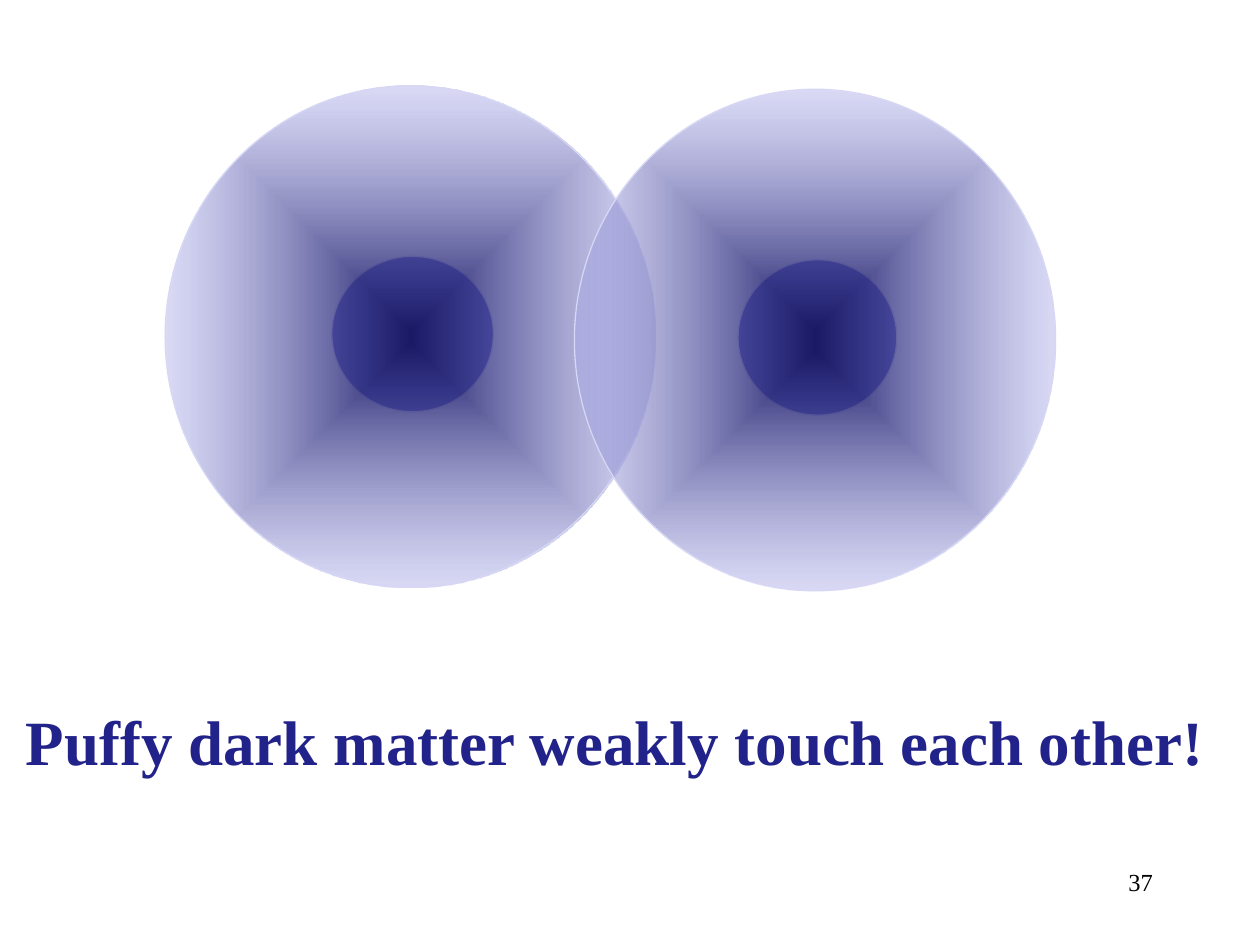
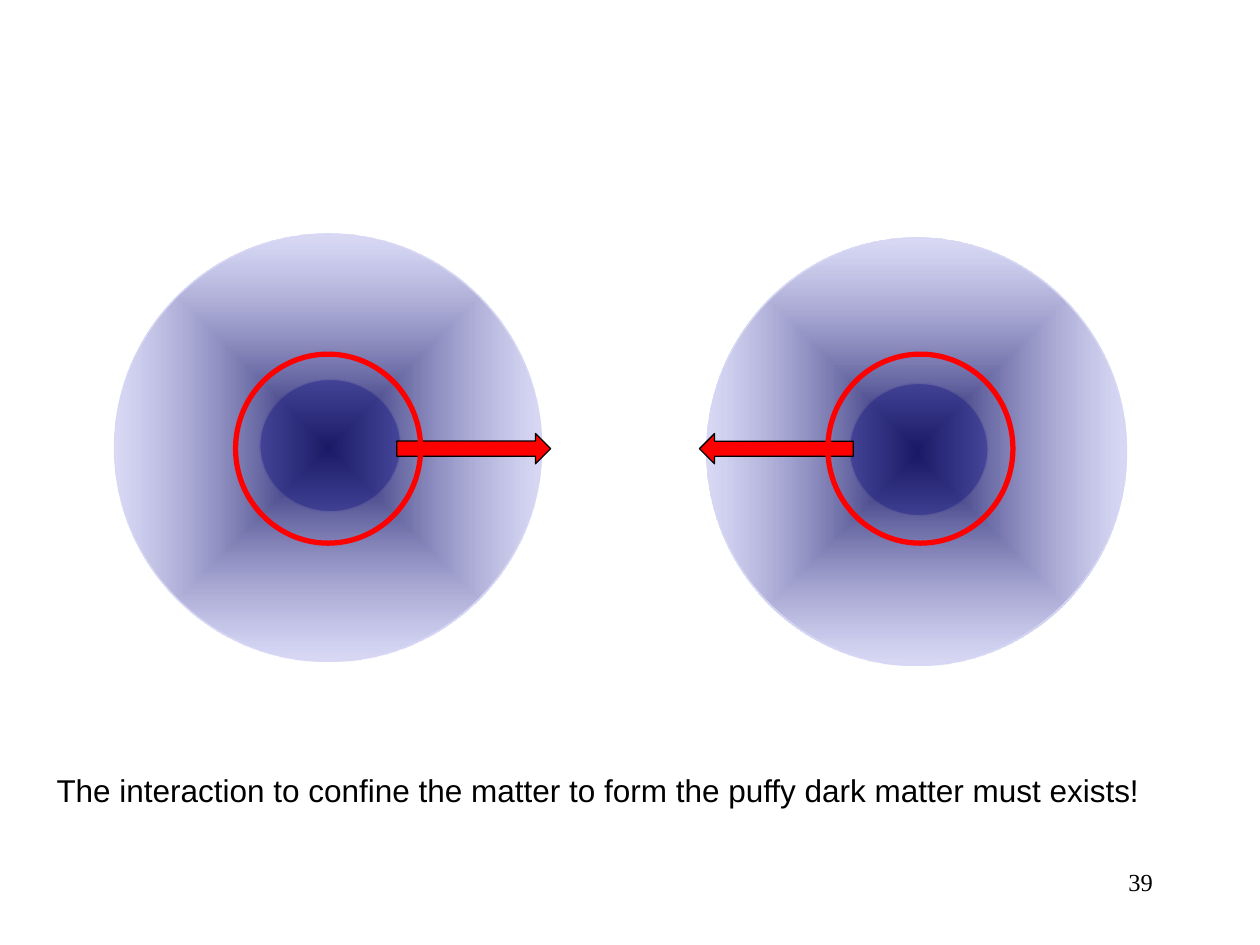
from pptx import Presentation, util as u
from pptx.dml.color import RGBColor
from pptx.enum import shapes, text
from pptx.oxml import ns, parse_xml

Cm, Pt = u.Cm, u.Pt
hexcolor = RGBColor.from_string
OVAL, ARROW = shapes.MSO_SHAPE.OVAL, shapes.MSO_SHAPE.RIGHT_ARROW

# Shared look
CORE, EDGE, RED, BLACK = "2D2DB9", "D6D6F5", "FF0000", "000000"
HALO = f"""<a:gradFill {ns.nsdecls("a")} rotWithShape="1"><a:gsLst>
<a:gs pos="0"><a:srgbClr val="191966"/></a:gs>
<a:gs pos="100000"><a:srgbClr val="ADADEB"><a:alpha val="44000"/></a:srgbClr></a:gs>
</a:gsLst><a:path path="shape"><a:fillToRect l="50000" t="50000" r="50000" b="50000"/></a:path>
</a:gradFill>"""
# Left, top, width and height of a core as shares of its halo
CORE_SHARE = (0.34, 0.34, 0.33, 0.31)

PAGE = {"size": Pt(14), "name": "Times New Roman", "bold": False}
HEADLINE = {"size": Pt(36), "name": "Times New Roman", "bold": True}
REMARK = {"size": Pt(18), "name": "Arial", "bold": False}
LEFT, CENTER, RIGHT = text.PP_ALIGN.LEFT, text.PP_ALIGN.CENTER, text.PP_ALIGN.RIGHT

# Per slide: halo boxes, arrows (left, rotation), ring lefts, page number, caption
arrow_top, arrow_size = 8.74, (3.1, 0.61)
ring_top, ring_size = 7.14, (3.73, 3.81)
pages = [
    {"halos": [(3.33, 1.73, 9.88, 10.11), (11.58, 1.8, 9.7, 10.11)],
     "arrows": [], "rings": [], "number": "37",
     "caption": ("Puffy dark matter weakly touch each other!",
                 (-0.71, 14.03, 26.21, 2.79), HEADLINE, "22228B", CENTER)},
    {"halos": [(2.31, 4.72, 8.61, 8.61), (14.25, 4.8, 8.46, 8.61)],
     "arrows": [(8.0, 0), (14.1, 180)], "rings": [4.75, 16.69], "number": "39",
     "caption": ("The interaction to confine the matter to form the puffy dark matter must exists!",
                 (0.89, 15.42, 23.01, 1.02), REMARK, BLACK, LEFT)},
]


def draw(slide, kind, box, fill, line, weight=0.75):
    figure = slide.shapes.add_shape(kind, *map(Cm, box))
    figure.shadow.inherit = False
    if fill:
        figure.fill.solid()
        figure.fill.fore_color.rgb = hexcolor(fill)
    else:
        figure.fill.background()
    figure.line.color.rgb = hexcolor(line)
    figure.line.width = Pt(weight)
    return figure


def write(slide, words, box, style, color, align):
    frame = slide.shapes.add_textbox(*map(Cm, box)).text_frame
    frame.word_wrap = True
    line = frame.paragraphs[0]
    line.alignment = align
    run = line.add_run()
    run.text = words
    for key, value in style.items():
        setattr(run.font, key, value)
    run.font.color.rgb = hexcolor(color)


deck = Presentation()
deck.slide_width, deck.slide_height = Cm(25.4), Cm(19.05)

for page in pages:
    slide = deck.slides.add_slide(deck.slide_layouts[6])
    write(slide, page["number"], (18.21, 17.35, 5.28, 1.27), PAGE, BLACK, RIGHT)

    # Puffy particles: a solid core under a translucent halo
    for x, y, width, height in page["halos"]:
        dx, dy, core_width, core_height = CORE_SHARE
        core_box = (x + dx * width, y + dy * height, core_width * width, core_height * height)
        draw(slide, OVAL, core_box, CORE, EDGE)
        halo = draw(slide, OVAL, (x, y, width, height), CORE, EDGE)
        properties = halo.element.spPr
        properties.replace(properties.find(ns.qn("a:solidFill")), parse_xml(HALO))

    # Arrows pointing at each other, then the confining rings
    for x, turn in page["arrows"]:
        draw(slide, ARROW, (x, arrow_top, *arrow_size), RED, BLACK).rotation = turn
    for x in page["rings"]:
        draw(slide, OVAL, (x, ring_top, *ring_size), None, RED, 3)

    write(slide, *page["caption"])

deck.save("out.pptx")
